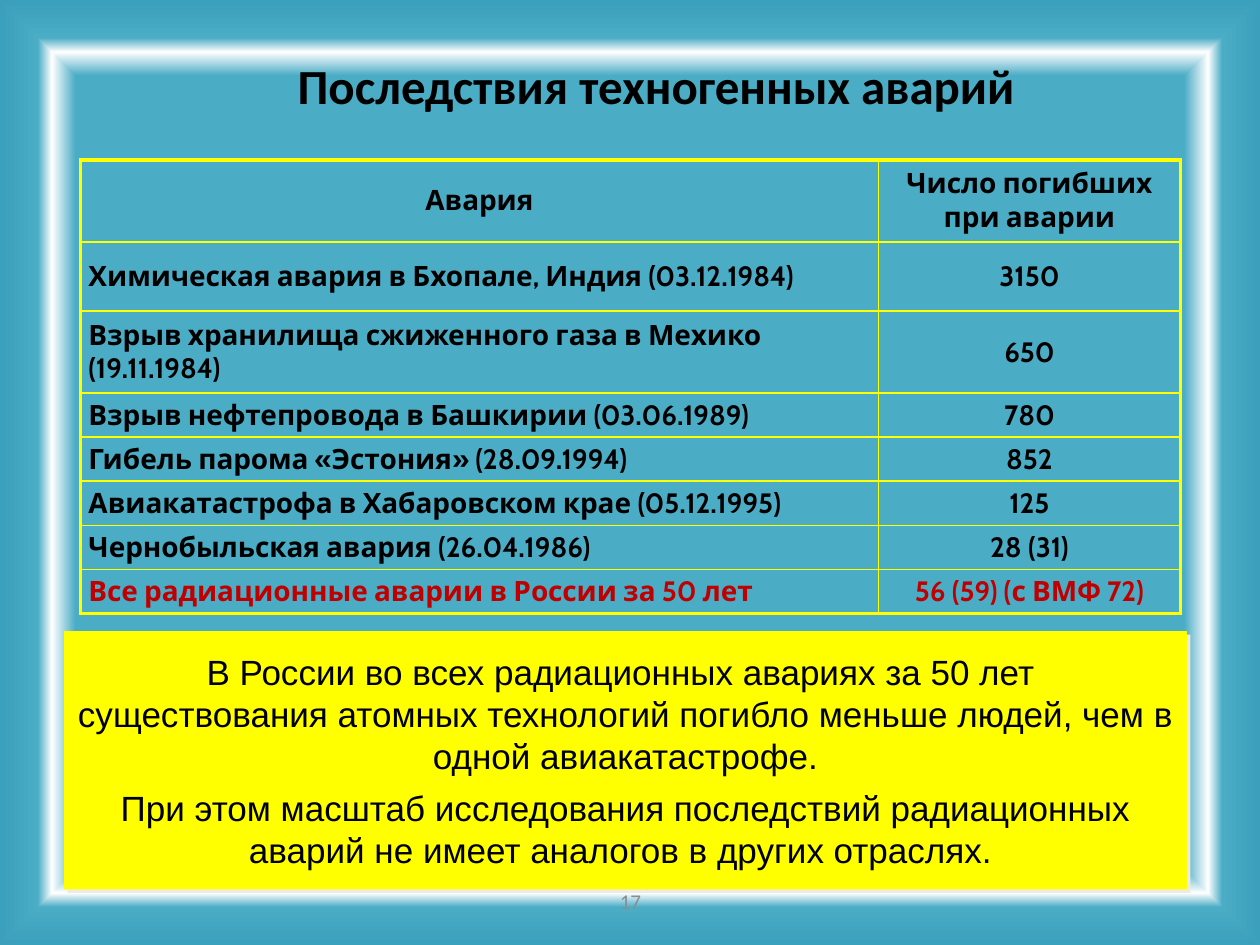
from dataclasses import dataclass

import pptx
import pptx.dml.color
import pptx.enum.shapes
import pptx.enum.text
import pptx.oxml
import pptx.oxml.ns
import pptx.util

Pt = pptx.util.Pt
ALIGN = pptx.enum.text.PP_ALIGN
MIDDLE = pptx.enum.text.MSO_ANCHOR.MIDDLE
NAMESPACE = pptx.oxml.ns.nsdecls("a")


@dataclass(frozen=True)
class Theme:
    sea: str = "4BACC6"
    deep_sea: str = "3BA0BB"
    white: str = "FFFFFF"
    yellow: str = "FFFF00"
    black: str = "000000"
    red: str = "C00000"
    gray: str = "8C8C8C"
    shadow: str = "EEECE1"
    title_font: str = "Calibri"
    table_font: str = "Cabin"
    body_font: str = "Arial"
    title_size: int = 28
    body_size: int = 20
    table_size: int = 16
    number_size: int = 12
    frame_line: float = 2.25
    inner_line: float = 1


THEME = Theme()

ACCIDENTS = [
    ("Авария", "Число погибших при аварии"),
    ("Химическая авария в Бхопале, Индия (03.12.1984)", "3150"),
    ("Взрыв хранилища сжиженного газа в Мехико (19.11.1984)", "650"),
    ("Взрыв нефтепровода в Башкирии (03.06.1989)", "780"),
    ("Гибель парома «Эстония» (28.09.1994)", "852"),
    ("Авиакатастрофа в Хабаровском крае (05.12.1995)", "125"),
    ("Чернобыльская авария (26.04.1986)", "28 (31)"),
    ("Все радиационные аварии в России за 50 лет", "56 (59) (с ВМФ 72)"),
]
COLUMN_WIDTHS = [455.8, 172.8]
ROW_HEIGHTS = [46.8, 39.6, 46.8] + [25.2] * 5

CONCLUSIONS = [
    ["В России во всех радиационных авариях за 50 лет ",
     "существования атомных технологий погибло меньше людей, чем в одной авиакатастрофе."],
    ["При этом масштаб исследования последствий радиационных аварий не имеет аналогов в других отраслях. "],
]


def rgb(color):
    return pptx.dml.color.RGBColor.from_string(color)


def paint_background(page):
    page.background.fill.gradient()
    gradient = page.element.find(".//" + pptx.oxml.ns.qn("a:gradFill"))
    stops = [(0, THEME.sea), (84, THEME.sea), (89, THEME.white),
             (92, THEME.sea), (100, THEME.deep_sea)]
    stop_xml = "".join(
        f'<a:gs pos="{place * 1000}"><a:srgbClr val="{color}"/></a:gs>'
        for place, color in stops)
    gradient.getparent().replace(gradient, pptx.oxml.parse_xml(
        f'<a:gradFill {NAMESPACE} rotWithShape="1"><a:gsLst>{stop_xml}</a:gsLst>'
        '<a:path path="shape"><a:fillToRect l="50000" t="50000" r="50000" b="50000"/>'
        '</a:path></a:gradFill>'))


def add_span(para, text, font, size, color, bold=False):
    span = para.add_run()
    span.text = text
    span.font.name = font
    span.font.size = Pt(size)
    span.font.bold = bold
    span.font.color.rgb = rgb(color)


def add_label(page, left, top, width, height, text, font, size, color, bold=False):
    box = page.shapes.add_textbox(Pt(left), Pt(top), Pt(width), Pt(height))
    box.text_frame.word_wrap = True
    box.text_frame.vertical_anchor = MIDDLE
    para = box.text_frame.paragraphs[0]
    para.alignment = ALIGN.CENTER
    add_span(para, text, font, size, color, bold)


def add_conclusion(page):
    box = page.shapes.add_shape(pptx.enum.shapes.MSO_SHAPE.RECTANGLE,
                                Pt(36.7), Pt(360.7), Pt(641.5), Pt(147.6))
    box.fill.solid()
    box.fill.fore_color.rgb = rgb(THEME.yellow)
    box.line.fill.background()
    box.shadow.inherit = False
    effects = box.element.spPr.find(pptx.oxml.ns.qn("a:effectLst"))
    effects.append(pptx.oxml.parse_xml(
        f'<a:outerShdw {NAMESPACE} dist="{Pt(2.8)}" dir="2700000" algn="ctr" '
        f'rotWithShape="0"><a:srgbClr val="{THEME.shadow}"/></a:outerShdw>'))
    frame = box.text_frame
    frame.word_wrap = True
    frame.vertical_anchor = MIDDLE
    frame.margin_left = frame.margin_right = Pt(7.2)
    frame.margin_top = frame.margin_bottom = Pt(9.4)
    for index, lines in enumerate(CONCLUSIONS):
        para = frame.add_paragraph() if index else frame.paragraphs[0]
        para.alignment = ALIGN.CENTER
        if index:
            para.space_before = Pt(6)
        for line_index, line in enumerate(lines):
            if line_index:
                para.add_line_break()
            add_span(para, line, THEME.body_font, THEME.body_size, THEME.black)


def set_borders(cell, outer_sides):
    properties = cell._tc.get_or_add_tcPr()
    for index, side in enumerate("LRTB"):
        width = THEME.frame_line if side in outer_sides else THEME.inner_line
        properties.insert(index, pptx.oxml.parse_xml(
            f'<a:ln{side} {NAMESPACE} w="{Pt(width)}"><a:solidFill>'
            f'<a:srgbClr val="{THEME.yellow}"/></a:solidFill></a:ln{side}>'))


def fill_cell(cell, text, centered, color):
    cell.fill.background()
    cell.vertical_anchor = MIDDLE
    cell.margin_left = Pt(1.5 if centered else 4.5)
    cell.margin_right = cell.margin_top = cell.margin_bottom = Pt(1.5)
    para = cell.text_frame.paragraphs[0]
    para.alignment = ALIGN.CENTER if centered else ALIGN.LEFT
    add_span(para, text, THEME.table_font, THEME.table_size, color, True)


def add_accident_table(page):
    table = page.shapes.add_table(
        len(ACCIDENTS), len(COLUMN_WIDTHS), Pt(46.1), Pt(91.4),
        Pt(sum(COLUMN_WIDTHS)), Pt(sum(ROW_HEIGHTS))).table
    table.horz_banding = False
    table.first_row = False
    for column, width in zip(table.columns, COLUMN_WIDTHS):
        column.width = Pt(width)
    for row, height in zip(table.rows, ROW_HEIGHTS):
        row.height = Pt(height)
    last = len(ACCIDENTS) - 1
    for row_index, texts in enumerate(ACCIDENTS):
        color = THEME.red if row_index == last else THEME.black
        row_sides = {0: "T", last: "B"}.get(row_index, "")
        for column_index, text in enumerate(texts):
            cell = table.cell(row_index, column_index)
            fill_cell(cell, text, row_index == 0 or column_index == 1, color)
            set_borders(cell, row_sides + "LR"[column_index])


def main():
    deck = pptx.Presentation()
    deck.slide_width, deck.slide_height = Pt(720), Pt(540)
    page = deck.slides.add_slide(deck.slide_layouts[6])
    paint_background(page)
    add_label(page, 246.2, 500.4, 228.2, 28.8, "17",
              THEME.title_font, THEME.number_size, THEME.gray)
    add_label(page, 70.6, 31.7, 608.4, 33.8, "Последствия техногенных аварий",
              THEME.title_font, THEME.title_size, THEME.black, True)
    add_conclusion(page)
    add_accident_table(page)
    deck.save("out.pptx")


if __name__ == "__main__":
    main()
